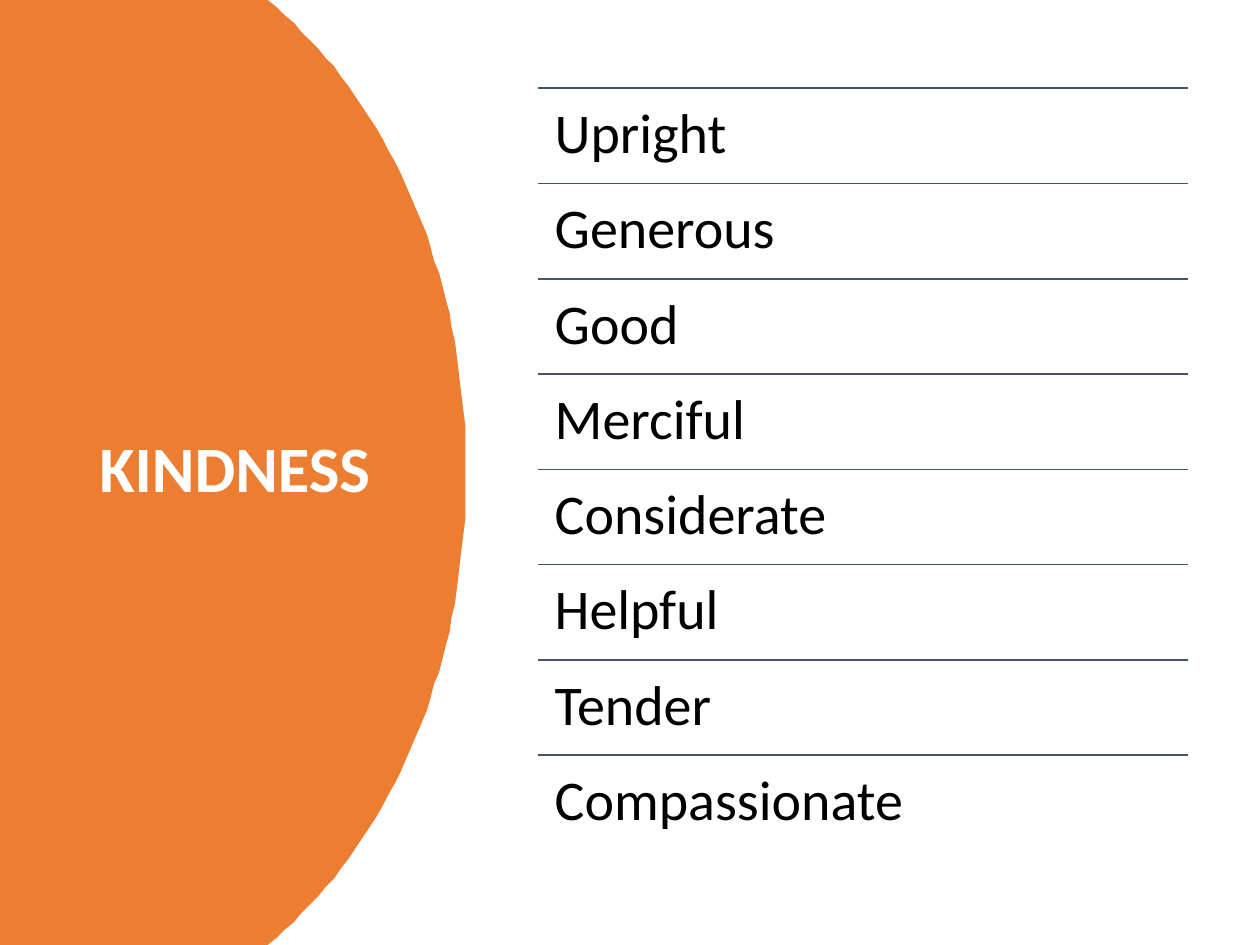
import pptx
import pptx.dml.color
import pptx.enum.shapes
import pptx.enum.text
import pptx.util
from lxml import etree

Pt = pptx.util.Pt
ANCHOR = pptx.enum.text.MSO_ANCHOR
WIDTH, HEIGHT = 720, 540
TRAITS = ["Upright", "Generous", "Good", "Merciful",
          "Considerate", "Helpful", "Tender", "Compassionate"]


def color(value):
    return pptx.dml.color.RGBColor.from_string(value)


def curve(start, control1, control2, end, steps=40):
    """Return points along a cubic Bezier curve, both ends included."""
    points = []
    for step in range(steps + 1):
        t = step / steps
        weights = ((1 - t) ** 3, 3 * t * (1 - t) ** 2, 3 * t * t * (1 - t), t ** 3)
        points.append(tuple(
            sum(weight * value for weight, value in zip(weights, values))
            for values in zip(start, control1, control2, end)))
    return points


class SlideBuilder:
    font = "Calibri"
    accent = "ED7D31"
    rule_color = "44546A"

    def __init__(self, slide):
        self.slide = slide

    def outline(self, points):
        builder = self.slide.shapes.build_freeform(*points[0], scale=Pt(1))
        builder.add_line_segments(points[1:], close=True)
        shape = builder.convert_to_shape()
        shape.shadow.inherit = False
        shape.fill.solid()
        shape.fill.fore_color.rgb = color(self.accent)
        shape.line.fill.background()

    def rule(self, left, top, width):
        line = self.slide.shapes.add_connector(
            pptx.enum.shapes.MSO_CONNECTOR.STRAIGHT,
            Pt(left), Pt(top), Pt(left + width), Pt(top))
        line.line.color.rgb = color(self.rule_color)
        line.line.width = Pt(1)
        etree.SubElement(line._element.spPr, pptx.oxml.ns.qn("a:effectLst"))

    def text(self, content, left, top, width, height, size, ink="000000",
             bold=False, anchor=ANCHOR.TOP, inset=7.2):
        box = self.slide.shapes.add_textbox(Pt(left), Pt(top), Pt(width), Pt(height))
        frame = box.text_frame
        frame.word_wrap = True
        frame.vertical_anchor = anchor
        frame.margin_left = frame.margin_right = Pt(inset)
        frame.margin_top = frame.margin_bottom = Pt(inset)
        para = frame.paragraphs[0]
        para.text = content
        para.line_spacing = 0.9
        para.font.name = self.font
        para.font.size = Pt(size)
        para.font.bold = bold
        para.font.color.rgb = color(ink)


def main():
    deck = pptx.Presentation()
    deck.slide_width, deck.slide_height = Pt(WIDTH), Pt(HEIGHT)
    page = SlideBuilder(deck.slides.add_slide(deck.slide_layouts[6]))

    upper = curve((152.6, 0), (221, 55.4), (266.4, 155.5), (266.4, HEIGHT / 2))
    lower = [(x, HEIGHT - y) for x, y in reversed(upper[:-1])]
    page.outline([(0, 0)] + upper + lower + [(0, HEIGHT)])
    page.text("KINDNESS", 49.7, 50.4, 174.2, 438.5, 37, "FFFFFF",
              bold=True, anchor=ANCHOR.MIDDLE)

    left, top, width, row_height = 307.4, 50.5, 371.5, 54.43
    for row, trait in enumerate(TRAITS):
        row_top = top + row * row_height
        page.rule(left, row_top, width)
        page.text(trait, left, row_top, width, row_height, 32, inset=9.6)

    deck.save("out.pptx")


if __name__ == "__main__":
    main()
